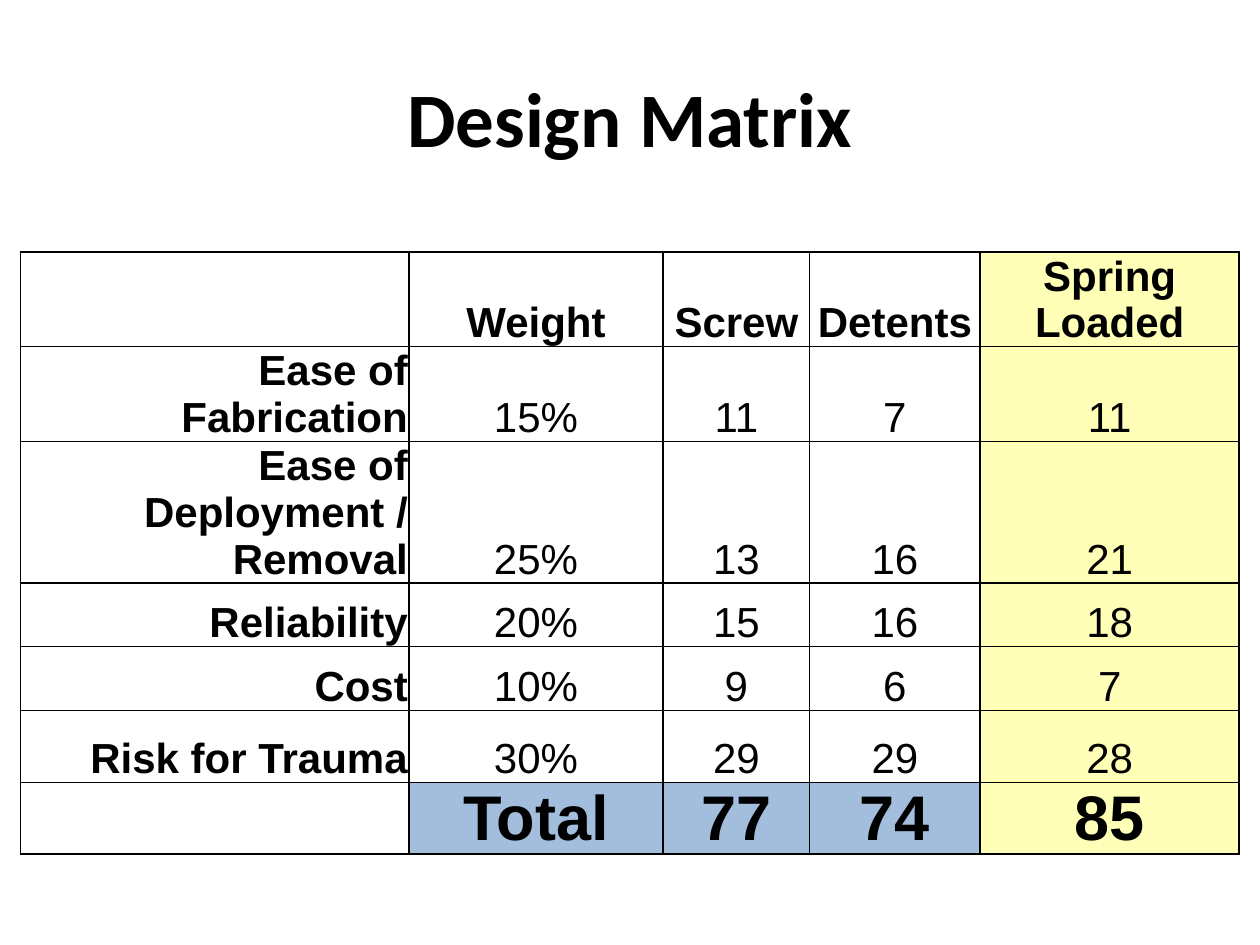
from lxml.etree import SubElement
from pptx import Presentation
from pptx.dml.color import RGBColor
from pptx.enum.text import MSO_ANCHOR, PP_ALIGN
from pptx.oxml import parse_xml
from pptx.oxml.ns import nsdecls, qn
from pptx.util import Cm, Pt

COLORS = {
    "text": "000000",
    "border": "000000",
    "title": "FFFFFF",
    "chosen": "FFFF66",
    "total": "4F81BD",
}
OPACITY = {"title": 20, "chosen": 47, "total": 52}

MATRIX = [
    ["", "Weight", "Screw", "Detents", "Spring Loaded"],
    ["Ease of Fabrication", "15%", "11", "7", "11"],
    ["Ease of Deployment /\nRemoval", "25%", "13", "16", "21"],
    ["Reliability", "20%", "15", "16", "18"],
    ["Cost", "10%", "9", "6", "7"],
    ["Risk for Trauma", "30%", "29", "29", "28"],
    ["", "Total", "77", "74", "85"],
]
COL_WIDTHS = [7.83, 5.13, 2.95, 3.44, 5.22]
ROW_HEIGHTS = [1.47, 1.6, 2.21, 1.28, 1.29, 1.45, 1.24]


def format_text(tf, font, size, bold, align):
    for p in tf.paragraphs:
        p.alignment = align
        for r in p.runs:
            r.font.name = font
            r.font.size = Pt(size)
            r.font.bold = bold
            r.font.color.rgb = RGBColor.from_string(COLORS["text"])


def set_fill(fill, parent, name):
    """Give the fill held by the parent element a translucent named colour."""
    fill.solid()
    fill.fore_color.rgb = RGBColor.from_string(COLORS[name])
    color = parent.find(qn("a:solidFill")).find(qn("a:srgbClr"))
    SubElement(color, qn("a:alpha"), val=str(OPACITY[name] * 1000))


def border_cell(cell):
    for i, side in enumerate(("lnL", "lnR", "lnT", "lnB")):
        ln = parse_xml(
            f'<a:{side} {nsdecls("a")} w="{Pt(1)}"><a:solidFill>'
            f'<a:srgbClr val="{COLORS["border"]}"/></a:solidFill></a:{side}>'
        )
        cell._tc.get_or_add_tcPr().insert(i, ln)


def add_title(slide, left, top, width, height):
    s = slide.shapes.title
    s.left, s.top, s.width, s.height = left, top, width, height
    set_fill(s.fill, s.element.spPr, "title")
    tf = s.text_frame
    tf.text = "Design Matrix"
    tf.vertical_anchor = MSO_ANCHOR.MIDDLE
    format_text(tf, "Calibri", 44, True, PP_ALIGN.CENTER)


def add_matrix(slide, left, top, width, height):
    last_row, last_col = len(MATRIX) - 1, len(COL_WIDTHS) - 1
    table = slide.shapes.add_table(
        len(MATRIX), len(COL_WIDTHS), left, top, width, height
    ).table
    table.first_row = table.horz_banding = False
    for col, w in zip(table.columns, COL_WIDTHS):
        col.width = Cm(w)
    for row, h in zip(table.rows, ROW_HEIGHTS):
        row.height = Cm(h)

    for i, texts in enumerate(MATRIX):
        for j, text in enumerate(texts):
            cell = table.cell(i, j)
            cell.vertical_anchor = MSO_ANCHOR.BOTTOM
            cell.margin_left = cell.margin_right = cell.margin_top = Cm(0.02)
            cell.margin_bottom = 0
            cell.text_frame.text = text
            format_text(
                cell.text_frame,
                "Arial",
                36 if i == last_row else 24,
                i in (0, last_row) or j == 0,
                PP_ALIGN.RIGHT if j == 0 else PP_ALIGN.CENTER,
            )
            if j == last_col:
                set_fill(cell.fill, cell._tc.tcPr, "chosen")
            elif i == last_row and j > 0:
                set_fill(cell.fill, cell._tc.tcPr, "total")
            else:
                cell.fill.background()
            border_cell(cell)


def main():
    prs = Presentation()
    prs.slide_width, prs.slide_height = Cm(25.4), Cm(19.05)
    slide = prs.slides.add_slide(prs.slide_layouts[5])
    add_title(slide, Cm(1.27), Cm(0.76), Cm(22.86), Cm(3.18))
    add_matrix(slide, Cm(0.41), Cm(5.08), Cm(sum(COL_WIDTHS)), Cm(sum(ROW_HEIGHTS)))
    prs.save("out.pptx")


if __name__ == "__main__":
    main()
